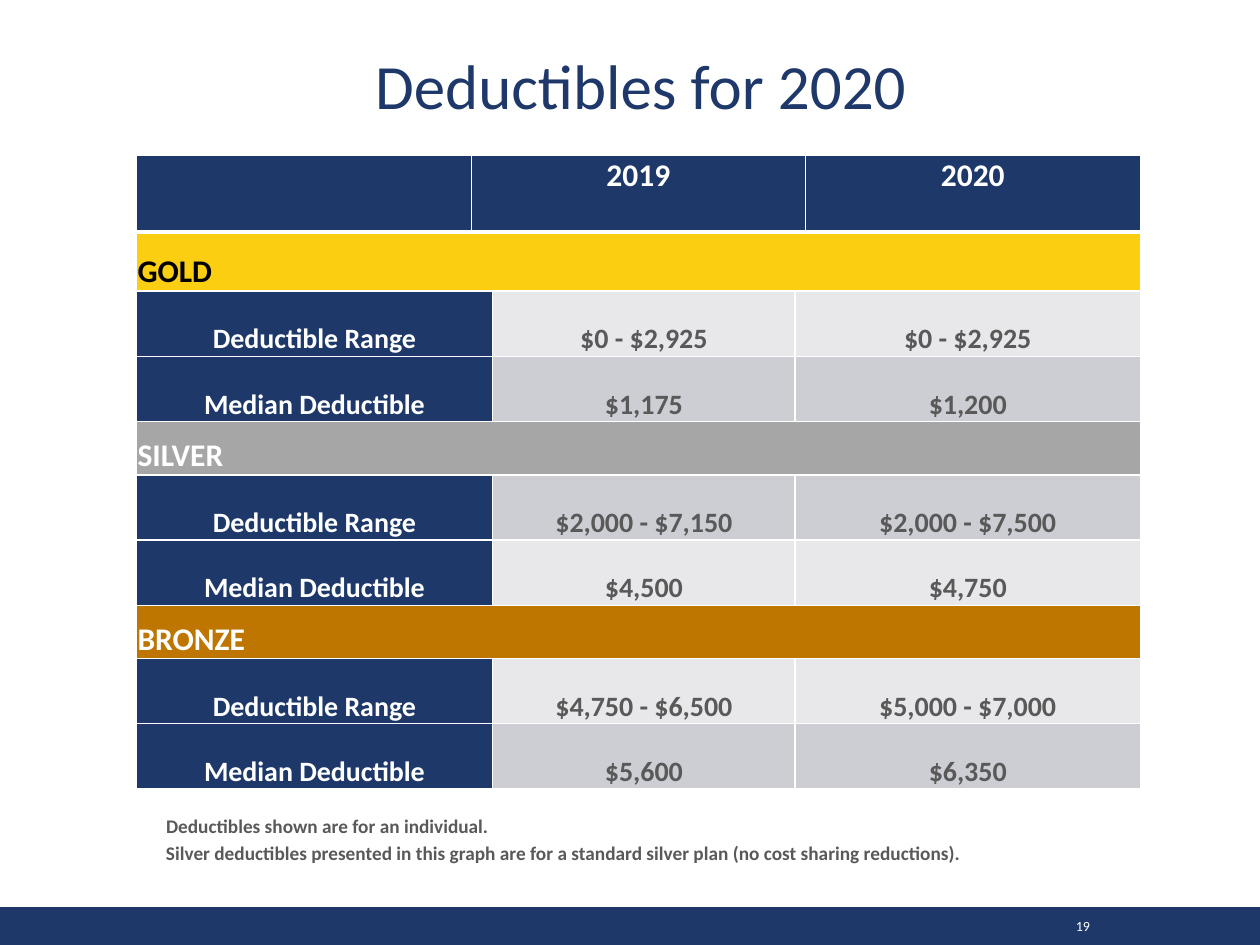
from typing import NamedTuple

import pptx
import pptx.dml.color
import pptx.enum.shapes
import pptx.enum.text
import pptx.oxml
import pptx.oxml.ns
import pptx.util

Pt = pptx.util.Pt
Align = pptx.enum.text.PP_ALIGN
Anchor = pptx.enum.text.MSO_ANCHOR

FONT = "Calibri"
NAVY, WHITE, BLACK, GREY = "1E386A", "FFFFFF", "000000", "595959"
BANDS = ("E8E8EB", "CDCED4")
COLUMNS = (191.5, 12.2, 172.8, 5.8, 191.5)
HEADER_H, GOLD_H, TIER_H, ITEM_H = 44, 33.8, 30.4, 37.3
LAST = len(COLUMNS) - 1


class Tier(NamedTuple):
    name: str
    fill: str
    color: str
    height: float
    ranges: tuple[str, str]
    medians: tuple[str, str]


class Label(NamedTuple):
    text: str
    box: tuple[float, float, float, float]
    size: float
    color: str
    bold: bool = False
    align: Align = Align.LEFT
    anchor: Anchor = Anchor.TOP
    spacing: float = 1.0


TIERS = (
    Tier("GOLD", "FBCE11", BLACK, GOLD_H,
         ("$0 - $2,925", "$0 - $2,925"), ("$1,175", "$1,200")),
    Tier("SILVER", "A6A6A6", WHITE, TIER_H,
         ("$2,000 - $7,150", "$2,000 - $7,500"), ("$4,500", "$4,750")),
    Tier("BRONZE", "BE7600", WHITE, TIER_H,
         ("$4,750 - $6,500", "$5,000 - $7,000"), ("$5,600", "$6,350")),
)

LABELS = (
    Label("19", (584.6, 519.8, 45.4, 18), 8, WHITE,
          align=Align.RIGHT, anchor=Anchor.MIDDLE),
    Label("Deductibles for 2020", (0, 6.5, 732.2, 67.7), 36, NAVY,
          align=Align.CENTER, anchor=Anchor.BOTTOM, spacing=0.9),
    Label("Deductibles shown are for an individual.",
          (87.8, 461.5, 505.4, 20.9), 11, GREY, bold=True),
    Label("Silver deductibles presented in this graph are for a standard "
          "silver plan (no cost sharing reductions).",
          (87.8, 477.4, 528.5, 20.9), 11, GREY, bold=True),
)


def rgb(value: str) -> pptx.dml.color.RGBColor:
    return pptx.dml.color.RGBColor.from_string(value)


def style(p, size: float, color: str, bold: bool, align: Align) -> None:
    p.alignment = align
    p.font.name = FONT
    p.font.size = Pt(size)
    p.font.bold = bold
    p.font.color.rgb = rgb(color)


def add_label(s, label: Label) -> None:
    tf = s.shapes.add_textbox(*map(Pt, label.box)).text_frame
    tf.word_wrap = True
    tf.vertical_anchor = label.anchor
    p = tf.paragraphs[0]
    p.text = label.text
    p.line_spacing = label.spacing
    style(p, label.size, label.color, label.bold, label.align)


def set_borders(cell, row: int) -> None:
    """White grid, with a thicker rule under the header row."""
    widths = {"L": 1, "R": 1, "T": 3 if row == 1 else 1, "B": 3 if row == 0 else 1}
    tc_pr = cell._tc.get_or_add_tcPr()
    for side, width in widths.items():
        tc_pr.append(pptx.oxml.parse_xml(
            f'<a:ln{side} {pptx.oxml.ns.nsdecls("a")} w="{Pt(width)}">'
            f'<a:solidFill><a:srgbClr val="{WHITE}"/></a:solidFill></a:ln{side}>'))


def fill_cells(table, row: int, first: int, last: int, text: str, fill: str,
               color: str, size: float, align: Align = Align.CENTER,
               anchor: Anchor = Anchor.BOTTOM) -> None:
    """Write one cell that spans the columns first to last."""
    for col in range(first, last + 1):
        cell = table.cell(row, col)
        set_borders(cell, row)
        cell.fill.solid()
        cell.fill.fore_color.rgb = rgb(fill)
        cell.margin_left = cell.margin_right = cell.margin_top = Pt(0.7)
        cell.margin_bottom = 0
    cell = table.cell(row, first)
    if last > first:
        cell.merge(table.cell(row, last))
    cell.vertical_anchor = anchor
    p = cell.text_frame.paragraphs[0]
    p.text = text
    style(p, size, color, True, align)


def add_deductibles(s) -> None:
    heights = [HEADER_H]
    for tier in TIERS:
        heights += [tier.height, ITEM_H, ITEM_H]
    table = s.shapes.add_table(len(heights), len(COLUMNS), Pt(77.9), Pt(88.6),
                               Pt(sum(COLUMNS)), Pt(sum(heights))).table
    for column, width in zip(table.columns, COLUMNS):
        column.width = Pt(width)
    for table_row, height in zip(table.rows, heights):
        table_row.height = Pt(height)

    for first, last, text in ((0, 0, ""), (1, 3, "2019"), (LAST, LAST, "2020")):
        fill_cells(table, 0, first, last, text, NAVY, WHITE, 18, anchor=Anchor.TOP)

    for i, tier in enumerate(TIERS):
        top = 1 + 3 * i
        fill_cells(table, top, 0, LAST, tier.name, tier.fill, tier.color, 18, Align.LEFT)
        items = (("Deductible Range", tier.ranges), ("Median Deductible", tier.medians))
        for row, (name, (old, new)) in enumerate(items, top + 1):
            band = BANDS[row % 2]
            fill_cells(table, row, 0, 1, name, NAVY, WHITE, 16)
            fill_cells(table, row, 2, 2, old, band, GREY, 16)
            fill_cells(table, row, 3, LAST, new, band, GREY, 16)


def main() -> None:
    prs = pptx.Presentation()
    prs.slide_width, prs.slide_height = Pt(720), Pt(540)
    s = prs.slides.add_slide(prs.slide_layouts[6])

    footer = s.shapes.add_shape(pptx.enum.shapes.MSO_SHAPE.RECTANGLE,
                                0, Pt(518.4), Pt(720), Pt(21.6))
    footer.shadow.inherit = False
    footer.fill.solid()
    footer.fill.fore_color.rgb = rgb(NAVY)
    footer.line.fill.background()

    add_deductibles(s)
    for label in LABELS:
        add_label(s, label)
    prs.save("out.pptx")


if __name__ == "__main__":
    main()
